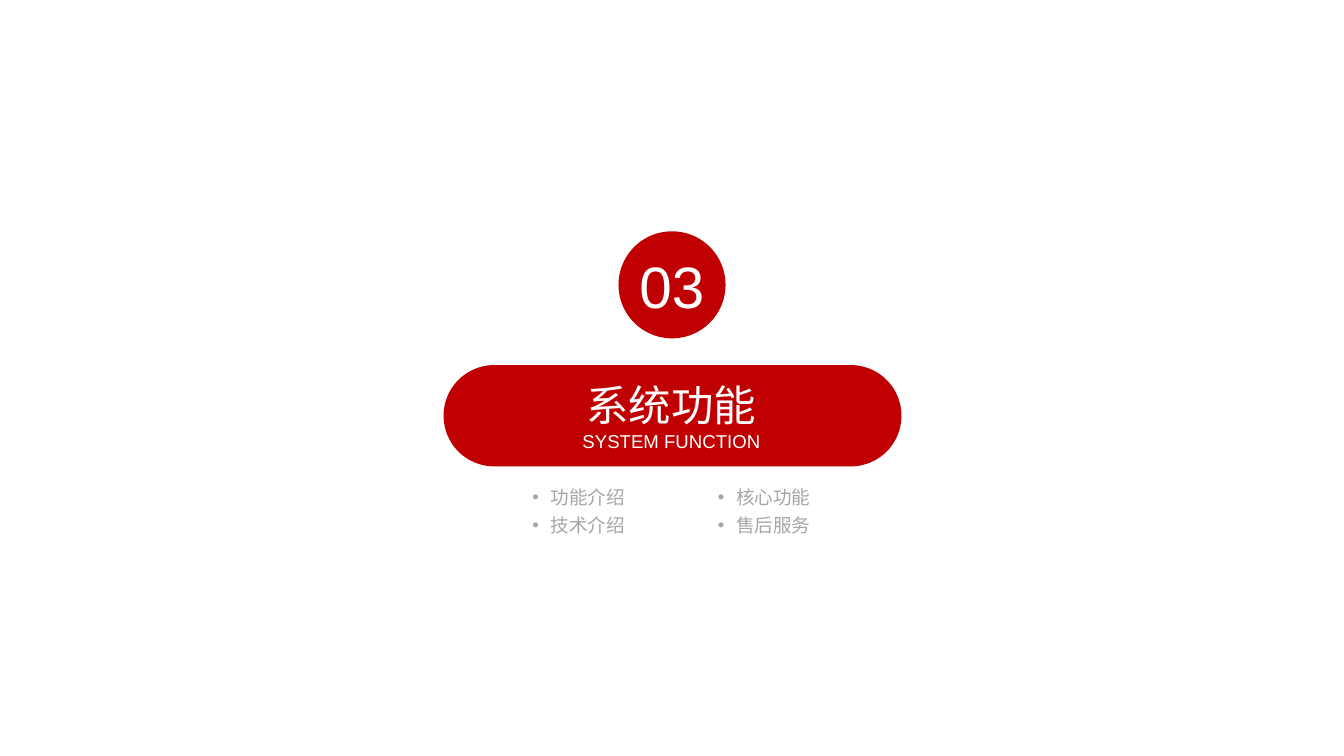
from lxml import etree
from pptx import Presentation
from pptx import util as u
from pptx.dml.color import RGBColor
from pptx.enum import shapes, text
from pptx.oxml.ns import qn

RED = "C00000"
WHITE = "FFFFFF"
GRAY = "A6A6A6"
TOPICS = [["功能介绍", "核心功能"], ["技术介绍", "售后服务"]]


def colour(value):
    return RGBColor.from_string(value)


def prepare_frame(shape, anchor, wrap=True):
    frame = shape.text_frame
    frame.margin_left = frame.margin_top = frame.margin_right = frame.margin_bottom = 0
    frame.auto_size = text.MSO_AUTO_SIZE.NONE
    frame.vertical_anchor = anchor
    frame.word_wrap = wrap
    return frame


def format_paragraph(paragraph, size, color):
    paragraph.alignment = text.PP_ALIGN.CENTER
    paragraph.line_spacing = 1.0
    paragraph.font.name = "Arial"
    paragraph.font.size = u.Pt(size)
    paragraph.font.color.rgb = colour(color)


def add_red_shape(slide, kind, left, top, width, height):
    shape = slide.shapes.add_shape(
        kind, u.Inches(left), u.Inches(top), u.Inches(width), u.Inches(height))
    shape.shadow.inherit = False
    shape.fill.solid()
    shape.fill.fore_color.rgb = colour(RED)
    shape.line.fill.background()
    return shape


def add_section_number(slide, number):
    circle = add_red_shape(slide, shapes.MSO_SHAPE.OVAL, 6.47, 2.42, 1.12, 1.12)
    frame = prepare_frame(circle, text.MSO_ANCHOR.MIDDLE)
    frame.text = number
    format_paragraph(frame.paragraphs[0], 44, WHITE)


def add_section_title(slide, heading, subtitle):
    pill = add_red_shape(slide, shapes.MSO_SHAPE.ROUNDED_RECTANGLE, 4.64, 3.82, 4.79, 1.06)
    pill.adjustments[0] = 0.5
    title = slide.shapes.title
    title.left, title.top = u.Inches(5.64), u.Inches(3.96)
    title.width, title.height = u.Inches(2.77), u.Inches(0.77)
    title.element.addprevious(pill.element)
    frame = prepare_frame(title, text.MSO_ANCHOR.MIDDLE)
    frame.text = f"{heading}\n{subtitle}"
    for paragraph, size in zip(frame.paragraphs, (32, 14)):
        format_paragraph(paragraph, size, WHITE)


def add_topic(slide, topic, left, top):
    box = slide.shapes.add_textbox(
        u.Inches(left), u.Inches(top), u.Inches(0.97), u.Inches(0.24))
    frame = prepare_frame(box, text.MSO_ANCHOR.TOP, wrap=False)
    frame.text = topic
    paragraph = frame.paragraphs[0]
    properties = paragraph._p.get_or_add_pPr()
    properties.set("marL", str(u.Inches(0.19)))
    properties.set("indent", str(u.Inches(-0.19)))
    etree.SubElement(properties, qn("a:buFont")).set("typeface", "Arial")
    etree.SubElement(properties, qn("a:buChar")).set("char", "•")
    format_paragraph(paragraph, 14, GRAY)


def main():
    presentation = Presentation()
    presentation.slide_width = u.Inches(14.06)
    presentation.slide_height = u.Inches(7.91)
    slide = presentation.slides.add_slide(presentation.slide_layouts.get_by_name("Title Only"))
    add_section_title(slide, "系统功能", "SYSTEM FUNCTION")
    add_section_number(slide, "03")
    for row, topics in enumerate(TOPICS):
        for column, topic in enumerate(topics):
            add_topic(slide, topic, 5.57 + 1.94 * column, 5.08 + 0.3 * row)
    presentation.save("out.pptx")


if __name__ == "__main__":
    main()
